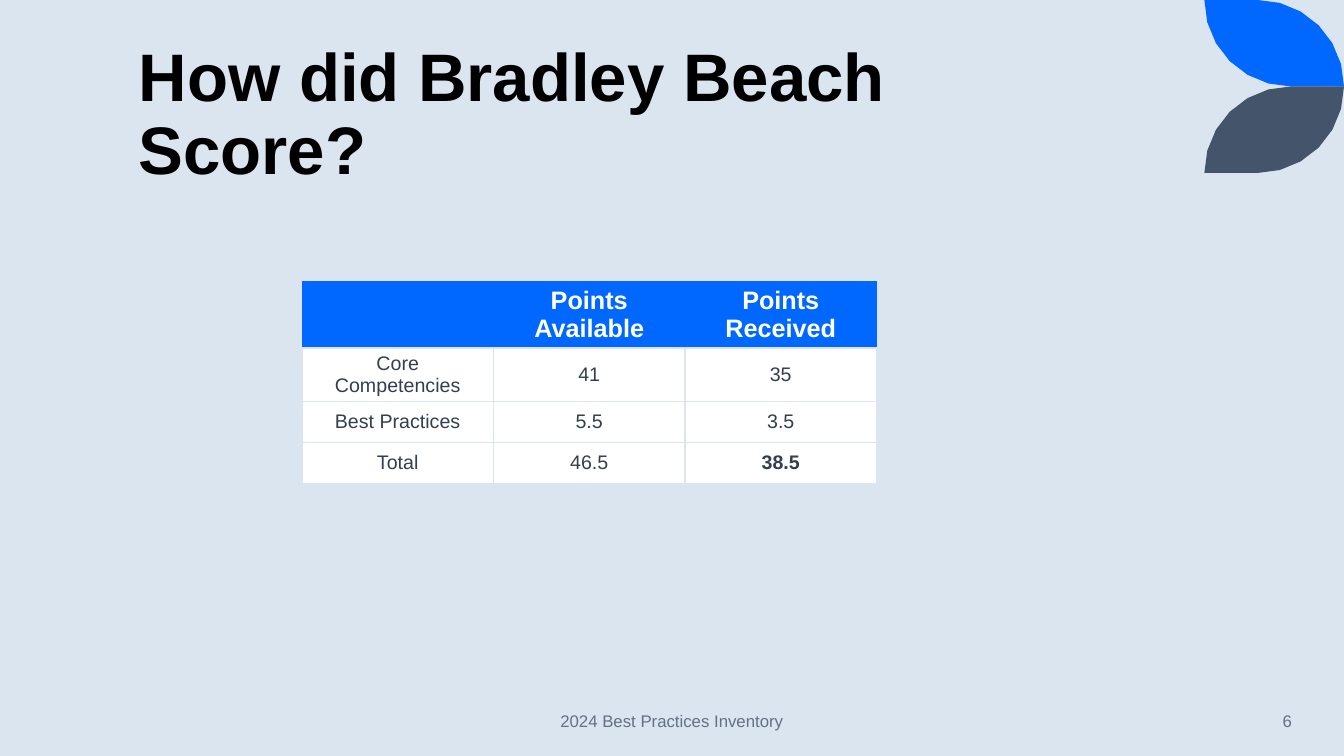
import dataclasses
import math

import lxml.etree
import pptx
import pptx.dml.color
import pptx.enum.text
import pptx.oxml.ns
import pptx.util

Pt = pptx.util.Pt
Align = pptx.enum.text.PP_ALIGN
Anchor = pptx.enum.text.MSO_ANCHOR


@dataclasses.dataclass(frozen=True)
class Theme:
    """Colours, font and type sizes of the slide."""
    font: str = "Arial"
    background: str = "DAE5EF"
    accent: str = "0068FF"
    slate: str = "44546A"
    title: str = "000000"
    white: str = "FFFFFF"
    body: str = "333F50"
    muted: str = "637183"
    title_size: int = 48
    header_size: int = 18
    body_size: int = 14
    footer_size: int = 12


THEME = Theme()
SCORES = [
    ["", "Points Available", "Points Received"],
    ["Core Competencies", "41", "35"],
    ["Best Practices", "5.5", "3.5"],
    ["Total", "46.5", "38.5"],
]


def paint(fill, color):
    """Give a fill one solid colour."""
    fill.solid()
    fill.fore_color.rgb = pptx.dml.color.RGBColor.from_string(color)


def write(frame, text, size, color, align, bold=False):
    """Put one styled paragraph in a text frame."""
    paragraph = frame.paragraphs[0]
    paragraph.text = text
    paragraph.alignment = align
    paragraph.font.name = THEME.font
    paragraph.font.size = Pt(size)
    paragraph.font.bold = bold
    paint(paragraph.font.fill, color)
    return paragraph


def add_label(slide, box, text, size, color, align, anchor, bold=False):
    """Place a wrapping line of text in a box and return its paragraph."""
    frame = slide.shapes.add_textbox(*map(Pt, box)).text_frame
    frame.word_wrap = True
    frame.vertical_anchor = anchor
    return write(frame, text, size, color, align, bold)


def add_leaf(slide, box, color, flipped=False):
    """Draw a leaf with two rounded corners, optionally upside down."""
    left, top, width, height = box
    steps = 6
    angles = [math.pi / 2 * step / steps for step in range(steps + 1)]
    outer = [(width - height + height * math.sin(a), height - height * math.cos(a))
             for a in angles]
    inner = [(width - x, height - y) for x, y in outer]
    points = [(Pt(left + x), Pt(top + (height - y if flipped else y)))
              for x, y in outer + inner]
    builder = slide.shapes.build_freeform(*points[0])
    builder.add_line_segments(points[1:], close=True)
    leaf = builder.convert_to_shape()
    leaf.shadow.inherit = False
    paint(leaf.fill, color)
    leaf.line.fill.background()


def set_borders(cell, colors):
    """Set left, right, top and bottom cell borders; None means no line."""
    properties = cell._tc.get_or_add_tcPr()
    for index, (side, color) in enumerate(zip("LRTB", colors)):
        line = lxml.etree.Element(pptx.oxml.ns.qn(f"a:ln{side}"), w=str(Pt(1)))
        kind = "a:solidFill" if color else "a:noFill"
        fill = lxml.etree.SubElement(line, pptx.oxml.ns.qn(kind))
        if color:
            lxml.etree.SubElement(fill, pptx.oxml.ns.qn("a:srgbClr"), val=color)
        properties.insert(index, line)


def add_scores(slide, box, rows):
    """Place the table of points with its blue header row."""
    table = slide.shapes.add_table(len(rows), len(rows[0]), *map(Pt, box)).table
    table.first_row = table.horz_banding = False
    rule = THEME.background
    for row, values in enumerate(rows):
        header = row == 0
        for column, value in enumerate(values):
            cell = table.cell(row, column)
            total = row == len(rows) - 1 and column == len(values) - 1
            cell.vertical_anchor = Anchor.MIDDLE
            cell.margin_top = cell.margin_bottom = Pt(2.3)
            paint(cell.fill, THEME.accent if header else THEME.white)
            set_borders(cell, [None, None, None, rule] if header else [rule] * 4)
            write(cell.text_frame, value,
                  THEME.header_size if header else THEME.body_size,
                  THEME.white if header else THEME.body,
                  Align.CENTER, header or total)


def add_footer(slide, box):
    """Place the centred footer and the page number along a strip."""
    left, top, width, height = box
    footer_width, number_width = 324, 130
    footer_left = left + (width - footer_width) / 2
    number_left = left + width - number_width
    for text, part, align in [
        ("2024 Best Practices Inventory",
         (footer_left, top, footer_width, height), Align.CENTER),
        ("6", (number_left, top, number_width, height), Align.RIGHT),
    ]:
        add_label(slide, part, text, THEME.footer_size, THEME.muted,
                  align, Anchor.MIDDLE)


def build_score_slide(deck):
    """Build the slide that shows the score."""
    slide = deck.slides.add_slide(deck.slide_layouts[6])
    paint(slide.background.fill, THEME.background)
    leaf_left, leaf_width, leaf_height = 860.25, 99.75, 61.8
    add_leaf(slide, (leaf_left, 0, leaf_width, leaf_height), THEME.accent)
    add_leaf(slide, (leaf_left, leaf_height, leaf_width, leaf_height),
             THEME.slate, flipped=True)
    title = add_label(slide, (92, 34, 658, 104.4), "How did Bradley Beach Score?",
                      THEME.title_size, THEME.title, Align.LEFT,
                      Anchor.BOTTOM, bold=True)
    title.line_spacing = 0.9
    add_scores(slide, (215.7, 200.75, 410.4, 117), SCORES)
    add_footer(slide, (30, 500.5, 900, 29))


def main():
    """Create and save the deck."""
    deck = pptx.Presentation()
    deck.slide_width, deck.slide_height = Pt(960), Pt(540)
    build_score_slide(deck)
    deck.save("out.pptx")


if __name__ == "__main__":
    main()
